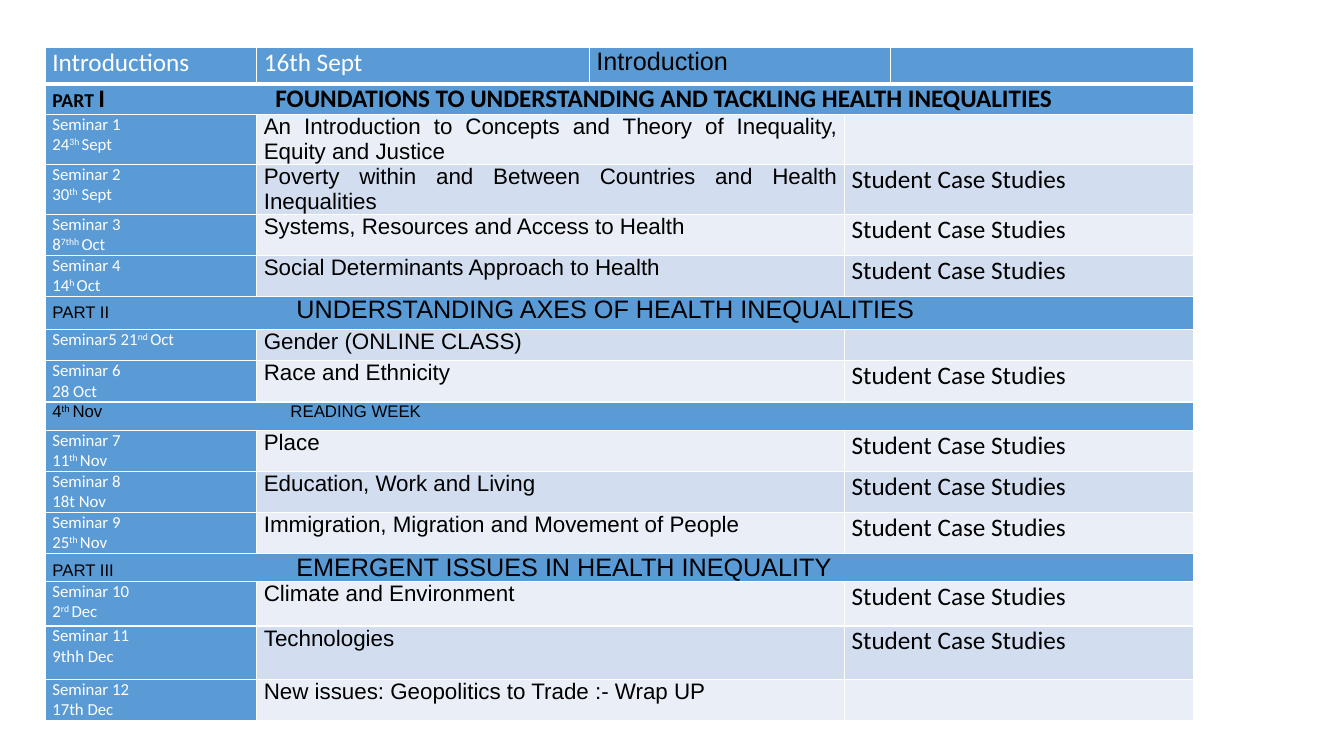
from lxml import etree
from pptx import Presentation
from pptx.dml.color import RGBColor
from pptx.enum.text import PP_ALIGN
from pptx.oxml.ns import qn
from pptx.util import Cm, Pt

LEFT, JUST = PP_ALIGN.LEFT, PP_ALIGN.JUSTIFY
WHITE = RGBColor(0xFF, 0xFF, 0xFF)
BLACK = RGBColor(0, 0, 0)
BLUE = RGBColor(0x5B, 0x9B, 0xD5)
PALE = RGBColor(0xEA, 0xEF, 0xF7)
SOFT = RGBColor(0xD2, 0xDE, 0xEF)

# Text formats
HEAD = dict(name="Calibri", size=Pt(18), bold=False, color=WHITE)
DATE = HEAD | dict(size=Pt(12))
NOTE = HEAD | dict(color=BLACK)
INTRO = NOTE | dict(name="Arial")
TOPIC = INTRO | dict(size=Pt(16))
LABEL = INTRO | dict(size=Pt(12))
BOLD = NOTE | dict(bold=True)
PART = BOLD | dict(size=Pt(14))

CASE = "Student Case Studies"
COLS = [5.33, 8.38, 6.43, 1.17, 7.62]

# Bands: height, tab stop, runs. Seminars: height, dates, topic, note.
# Text between two ^ marks is raised.
ROWS = [
    (0.71, 5.62, [("PART ", PART), ("I\tFOUNDATIONS TO UNDERSTANDING AND "
                                    "TACKLING HEALTH INEQUALITIES", BOLD)]),
    (0.71, ["Seminar 1", "24^3h ^Sept"],
     "An Introduction to Concepts and Theory of Inequality, Equity and Justice", ""),
    (0.71, ["Seminar 2", "30^th^ Sept"],
     "Poverty within and Between Countries and Health Inequalities", CASE),
    (0.74, ["Seminar 3", "8^7thh ^Oct"], "Systems, Resources and Access to Health", CASE),
    (0.71, ["Seminar 4", "14^h ^Oct"], "Social Determinants Approach to Health", CASE),
    (0.84, 6.15, [("PART II\t", LABEL),
                  ("UNDERSTANDING AXES OF HEALTH INEQUALITIES", INTRO)]),
    (0.79, ["Seminar5 21^nd ^Oct"], "Gender (ONLINE CLASS)", ""),
    (1.04, ["Seminar 6", "28 Oct"], "Race and Ethnicity", CASE),
    (0.71, 6, [("4^th ^Nov\tREADING WEEK", LABEL)]),
    (0.84, ["Seminar 7", "11^th ^Nov"], "Place", CASE),
    (0.71, ["Seminar 8", "18t Nov"], "Education, Work and Living", CASE),
    (0.71, ["Seminar 9", "25^th ^Nov"],
     "Immigration, Migration and Movement of People", CASE),
    (0.71, 6.15, [("PART III\t", LABEL),
                  ("EMERGENT ISSUES IN HEALTH INEQUALITY", INTRO)]),
    (1.12, ["Seminar 10", "2^rd ^Dec"], "Climate and Environment", CASE),
    (1.35, ["Seminar 11", "9thh Dec"], "Technologies", CASE),
    (1.04, ["Seminar 12", "17th Dec"], "New issues: Geopolitics to Trade :- Wrap UP", ""),
]


class Deck:
    def __init__(self):
        self.show = Presentation()
        self.show.slide_width, self.show.slide_height = Cm(33.87), Cm(19.05)
        self.slide = self.show.slides.add_slide(self.show.slide_layouts[6])

    def table(self, left, top, cols, rows):
        frame = self.slide.shapes.add_table(
            len(rows), len(cols), Cm(left), Cm(top), Cm(sum(cols)), Cm(sum(rows)))
        grid = frame.table
        for col, width in zip(grid.columns, cols):
            col.width = Cm(width)
        for row, high in zip(grid.rows, rows):
            row.height = Cm(high)
        return grid

    def edge(self, cell, base):
        props = cell._tc.get_or_add_tcPr()
        for pos, (side, wide) in enumerate(dict(L=1, R=1, T=1, B=base).items()):
            line = etree.Element(qn("a:ln" + side), w=str(Pt(wide)))
            fill = etree.SubElement(line, qn("a:solidFill"))
            etree.SubElement(fill, qn("a:srgbClr"), val=str(WHITE))
            props.insert(pos, line)

    def cell(self, cell, fill, base=1):
        margins = dict(margin_left=Cm(0.18), margin_right=Cm(0.18),
                       margin_top=0, margin_bottom=0)
        for key, value in margins.items():
            setattr(cell, key, value)
        cell.fill.solid()
        cell.fill.fore_color.rgb = fill
        self.edge(cell, base)

    def text(self, cell, lines, align=JUST, tab=None):
        frame = cell.text_frame
        for num, runs in enumerate(lines):
            para = frame.add_paragraph() if num else frame.paragraphs[0]
            para.alignment = align
            if tab:
                stops = etree.SubElement(para._p.get_or_add_pPr(), qn("a:tabLst"))
                etree.SubElement(stops, qn("a:tab"), pos=str(Cm(tab)), algn="l")
            for words, style in runs:
                self.run(para, words, style)

    def run(self, para, words, style):
        for num, part in enumerate(words.split("^")):
            if not part:
                continue
            run = para.add_run()
            run.text = part
            for key, value in style.items():
                if key == "color":
                    run.font.color.rgb = value
                else:
                    setattr(run.font, key, value)
            if num % 2:
                run._r.get_or_add_rPr().set("baseline", "30000")


def main():
    deck = Deck()
    grid = deck.table(1.14, 1.2, COLS, [0.91] + [row[0] for row in ROWS])

    # Header row
    for col in range(len(COLS)):
        deck.cell(grid.cell(0, col), BLUE, base=3)
    grid.cell(0, 2).merge(grid.cell(0, 3))
    for col, (words, style) in enumerate(
            [("Introductions", HEAD), ("16th Sept", HEAD), ("Introduction", INTRO)]):
        deck.text(grid.cell(0, col), [[(words, style)]])

    # Part bands and seminars
    for num, row in enumerate(ROWS, 1):
        band = len(row) == 3
        tint = SOFT if num % 2 else PALE
        for col in range(len(COLS)):
            deck.cell(grid.cell(num, col), BLUE if band or col == 0 else tint)
        first = grid.cell(num, 0)
        if band:
            first.merge(grid.cell(num, 4))
            deck.text(first, [row[2]], LEFT, row[1])
            continue
        dates, topic, note = row[1:]
        for col in (1, 3):
            grid.cell(num, col).merge(grid.cell(num, col + 1))
        deck.text(first, [[(date, DATE)] for date in dates])
        deck.text(grid.cell(num, 1), [[(topic, TOPIC)]])
        deck.text(grid.cell(num, 3), [[(note, NOTE)]], LEFT)

    deck.show.save("out.pptx")


if __name__ == "__main__":
    main()
